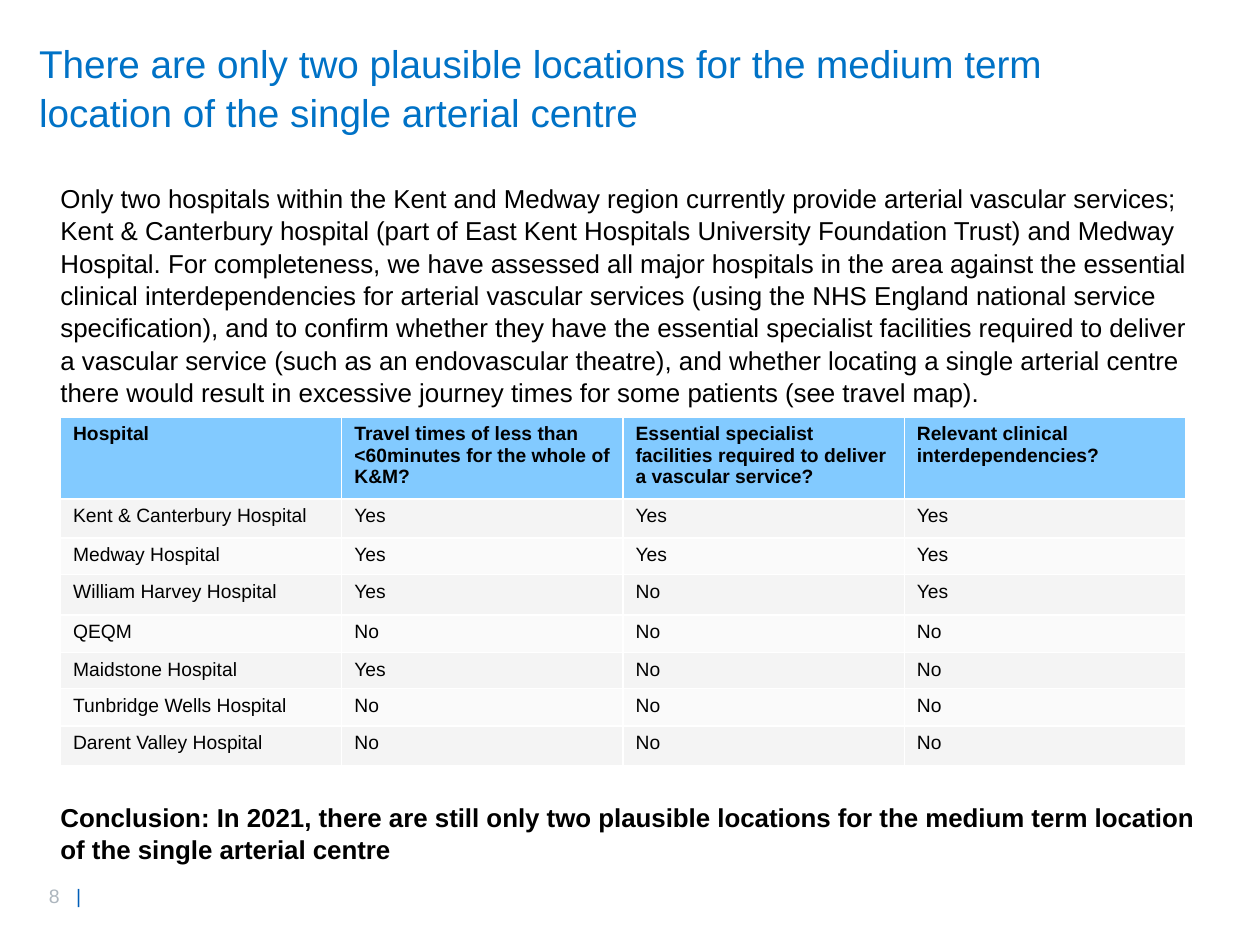
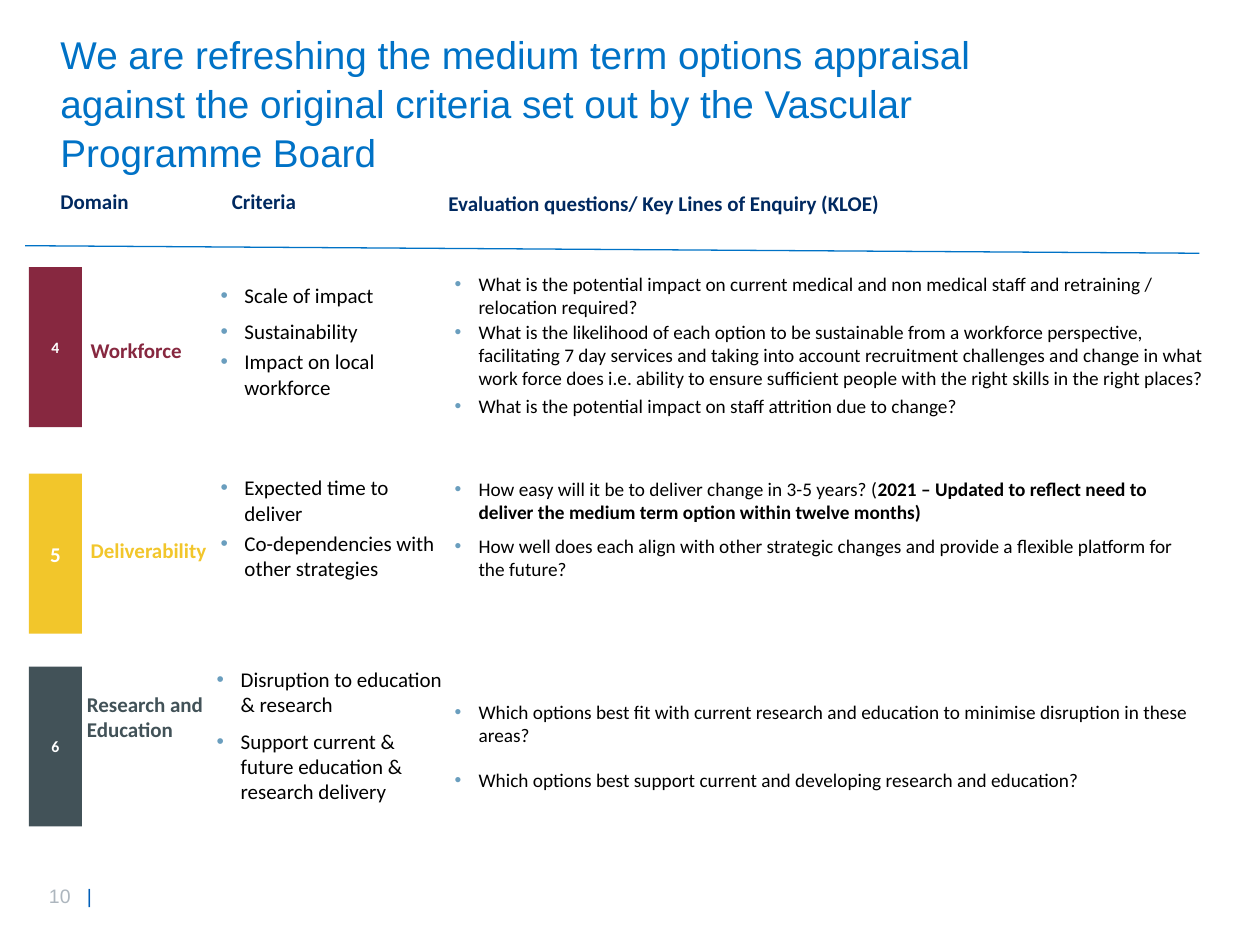
from lxml import etree
from pptx import Presentation
from pptx.dml.color import RGBColor
from pptx.enum.shapes import MSO_CONNECTOR, MSO_SHAPE
from pptx.enum.text import MSO_ANCHOR, PP_ALIGN
from pptx.oxml.ns import qn
from pptx.util import Inches, Pt

RECT = MSO_SHAPE.RECTANGLE
LINE = MSO_CONNECTOR.STRAIGHT
TOP, MIDDLE, BOTTOM = MSO_ANCHOR.TOP, MSO_ANCHOR.MIDDLE, MSO_ANCHOR.BOTTOM
CENTER = PP_ALIGN.CENTER

WIDTH, HEIGHT = Inches(10), Inches(7.5)
CELL = WIDTH // 100

BLUE = RGBColor(0x00, 0x72, 0xC6)
DEEP = RGBColor(0x00, 0x5E, 0xB8)
NAVY = RGBColor(0x00, 0x29, 0x60)
SKY = RGBColor(0x82, 0xCA, 0xFF)
GREY = RGBColor(0xAD, 0xB6, 0xBE)
PALE = RGBColor(0xF4, 0xF4, 0xF4)
FAINT = RGBColor(0xFA, 0xFA, 0xFA)
BLACK = RGBColor(0x00, 0x00, 0x00)
WHITE = RGBColor(0xFF, 0xFF, 0xFF)
WINE = RGBColor(0x87, 0x28, 0x40)
GOLD = RGBColor(0xF2, 0xC6, 0x2B)
SLATE = RGBColor(0x42, 0x52, 0x58)
DOT = "6A9EBE"
SANS, BODY = "Arial", "Calibri"

INTRO = (
    "Only two hospitals within the Kent and Medway region currently provide arterial "
    "vascular services; Kent & Canterbury hospital (part of East Kent Hospitals University "
    "Foundation Trust) and Medway Hospital. For completeness, we have assessed all major "
    "hospitals in the area against the essential clinical interdependencies for arterial "
    "vascular services (using the NHS England national service specification), and to "
    "confirm whether they have the essential specialist facilities required to deliver a "
    "vascular service (such as an endovascular theatre), and whether locating a single "
    "arterial centre there would result in excessive journey times for some patients "
    "(see travel map)."
)
CLOSE = (
    "Conclusion: In 2021, there are still only two plausible locations for the medium "
    "term location of the single arterial centre"
)
HEADS = (
    "Hospital",
    "Travel times of less than <60minutes for the whole of K&M?",
    "Essential specialist facilities required to deliver a vascular service?",
    "Relevant clinical interdependencies?",
)
SITES = (
    (3.1, "Kent & Canterbury Hospital", "Yes", "Yes", "Yes"),
    (2.9, "Medway Hospital", "Yes", "Yes", "Yes"),
    (3.2, "William Harvey Hospital", "Yes", "No", "Yes"),
    (3, "QEQM", "No", "No", "No"),
    (2.7, "Maidstone Hospital", "Yes", "No", "No"),
    (3, "Tunbridge Wells Hospital", "No", "No", "No"),
    (3.1, "Darent Valley Hospital", "No", "No", "No"),
)

LABELS = (
    (4.8, 15, "Domain"),
    (18.4, 15, "Criteria"),
    (35.6, 15.1, "Evaluation questions/ Key Lines of Enquiry (KLOE)"),
)
DOMAINS = (
    dict(
        top=21.2, mark="4", size=9, color=WINE, name="Workforce", drop=5.6, shift=0,
        aims=((1.2, "Scale of impact"), (4.1, "Sustainability"),
              (6.5, "Impact on local workforce")),
        asks=(
            (-0.1, 60.7, "What is the potential impact on current medical and non medical "
             "staff and retraining / relocation required?", ""),
            (3.7, 62.7, "What is the likelihood of each option to be sustainable from a "
             "workforce perspective, facilitating 7 day services and taking into account "
             "recruitment challenges and change in what work force does i.e. ability to "
             "ensure sufficient people with the right skills in the right places?", ""),
            (9.6, 60.7, "What is the potential impact on staff attrition due to change?", ""),
        ),
    ),
    dict(
        top=37.6, mark="5", size=12, color=GOLD, name="Deliverability", drop=5.1, shift=0,
        aims=((0.1, "Expected time to deliver"),
              (4.5, "Co-dependencies with other strategies")),
        asks=(
            (-0.2, 60.7, "How easy will it be to deliver change in 3-5 years? (",
             "2021 – Updated to reflect need to deliver the medium term option within "
             "twelve months)"),
            (4.3, 60.7, "How well does each align with other strategic changes and provide "
             "a flexible platform for the future?", ""),
        ),
    ),
    dict(
        top=52.9, mark="6", size=9, color=SLATE, name="Research and Education", drop=2,
        shift=-0.3,
        aims=((0, "Disruption to education & research"),
              (4.9, "Support current & future education & research delivery")),
        asks=(
            (2.2, 60.7, "Which options best fit with current research and education to "
             "minimise disruption in these areas?", ""),
            (7.6, 60.7, "Which options best support current and developing research and "
             "education?", ""),
        ),
    ),
)


def grid(*cells):
    """Turn grid cells into slide lengths."""
    return [round(cell * CELL) for cell in cells]


def style(para, size, color, bold=False, face=BODY):
    """Set the font of a whole paragraph."""
    font = para.font
    font.name, font.size, font.bold = face, Pt(size), bold
    font.color.rgb = color


def put(slide, box, text, inset=(0, 0), anchor=TOP):
    """Add a wrapped text box and return its paragraph."""
    frame = slide.shapes.add_textbox(*grid(*box)).text_frame
    frame.word_wrap = True
    frame.vertical_anchor = anchor
    side, edge = grid(*inset)
    frame.margin_left = frame.margin_right = side
    frame.margin_top = frame.margin_bottom = edge
    para = frame.paragraphs[0]
    para.add_run().text = text
    return para


def bullet(para):
    """Give a paragraph a coloured dot and a hanging indent."""
    props = para._p.get_or_add_pPr()
    indent = grid(1.9)[0]
    props.set("marL", str(indent))
    props.set("indent", str(-indent))
    tint = etree.SubElement(props, qn("a:buClr"))
    etree.SubElement(tint, qn("a:srgbClr"), val=DOT)
    etree.SubElement(props, qn("a:buFont"), typeface=SANS)
    etree.SubElement(props, qn("a:buChar"), char="•")


def base(deck, title, left, top, page):
    """Add a slide with the shared title and page number."""
    slide = deck.slides.add_slide(deck.slide_layouts[6])
    head = put(slide, (left, top, 81.8, 9.1), title, (0, 0.5))
    head.line_spacing = 1.05
    style(head, 22.1, BLUE, face=SANS)

    foot = put(slide, (2.9, 69.7, 6.5, 2.9), f"{page}\t", (1, 0.5))
    tabs = etree.SubElement(foot._p.get_or_add_pPr(), qn("a:tabLst"))
    stop = grid(1.3 + 0.85 * len(page))[0]
    etree.SubElement(tabs, qn("a:tab"), pos=str(stop), algn="l")
    style(foot, 11.1, GREY, face=SANS)
    bar = foot.add_run()
    bar.text = "|"
    bar.font.color.rgb = DEEP
    return slide


def sites(slide, left, top, width):
    """Draw the table of hospitals and their test results."""
    rows = ((6.3, *HEADS), *SITES)
    height = sum(row[0] for row in rows)
    table = slide.shapes.add_table(
        len(rows), len(HEADS), *grid(left, top, width, height)).table
    for col in table.columns:
        col.width = grid(width / len(HEADS))[0]
    for i, (tall, *texts) in enumerate(rows):
        table.rows[i].height = grid(tall)[0]
        for j, text in enumerate(texts):
            cell = table.cell(i, j)
            cell.fill.solid()
            cell.fill.fore_color.rgb = SKY if i == 0 else PALE if i % 2 else FAINT
            cell.text = text
            style(cell.text_frame.paragraphs[0], 11, BLACK, i == 0, SANS)


def places(deck):
    """Build the slide that compares the hospitals."""
    slide = base(deck, "There are only two plausible locations for the medium term "
                 "location of the single arterial centre", 3.1, 2.5, "8")
    for top, tall, text, bold in ((14.4, 17.5, INTRO, False), (63.5, 5.2, CLOSE, True)):
        para = put(slide, (4.8, top, 90.5, tall), text)
        para.line_spacing = 1.04
        style(para, 14.8, BLACK, bold, SANS)
    sites(slide, 4.8, 33.1, 89.3)


def domain(slide, left, top, mark, size, color, name, drop, shift, aims, asks):
    """Draw one domain row with its bar, name, criteria and questions."""
    bar = slide.shapes.add_shape(RECT, *grid(left, top, 4.2, 12.7))
    bar.shadow.inherit = False
    bar.fill.solid()
    bar.fill.fore_color.rgb = color
    bar.line.fill.background()
    bar.text_frame.vertical_anchor = MIDDLE
    para = bar.text_frame.paragraphs[0]
    para.add_run().text = mark
    para.alignment = CENTER
    style(para, size, WHITE, True)

    label = put(slide, (left + 4.9 + shift, top + drop, 10, 2), name)
    style(label, 12, color, True)
    for down, text in aims:
        aim = put(slide, (left + 15.2 + shift, top + down, 18.2, 4), text)
        bullet(aim)
        style(aim, 12, BLACK)
    for down, wide, text, strong in asks:
        ask = put(slide, (left + 32.8, top + down, wide, 4.7), text, (1, 0.5))
        bullet(ask)
        style(ask, 11, BLACK)
        if strong:
            extra = ask.add_run()
            extra.text = strong
            extra.font.bold = True


def criteria(deck):
    """Build the slide of domains, criteria and questions."""
    slide = base(deck, "We are refreshing the medium term options appraisal against the "
                 "original criteria set out by the Vascular Programme Board", 4.8, 1.8, "10")
    for left, top, text in LABELS:
        style(put(slide, (left, top, 60, 2), text, anchor=BOTTOM), 12, NAVY, True)
    rule = slide.shapes.add_connector(LINE, *grid(95.2, 20.1, 2, 19.5))
    rule.line.color.rgb = BLUE
    rule.line.width = Pt(0.75)
    etree.SubElement(rule._element.spPr, qn("a:effectLst"))
    for row in DOMAINS:
        domain(slide, 2.3, **row)


def main():
    """Build and save the deck."""
    deck = Presentation()
    deck.slide_width, deck.slide_height = WIDTH, HEIGHT
    places(deck)
    criteria(deck)
    deck.save("out.pptx")


if __name__ == "__main__":
    main()
